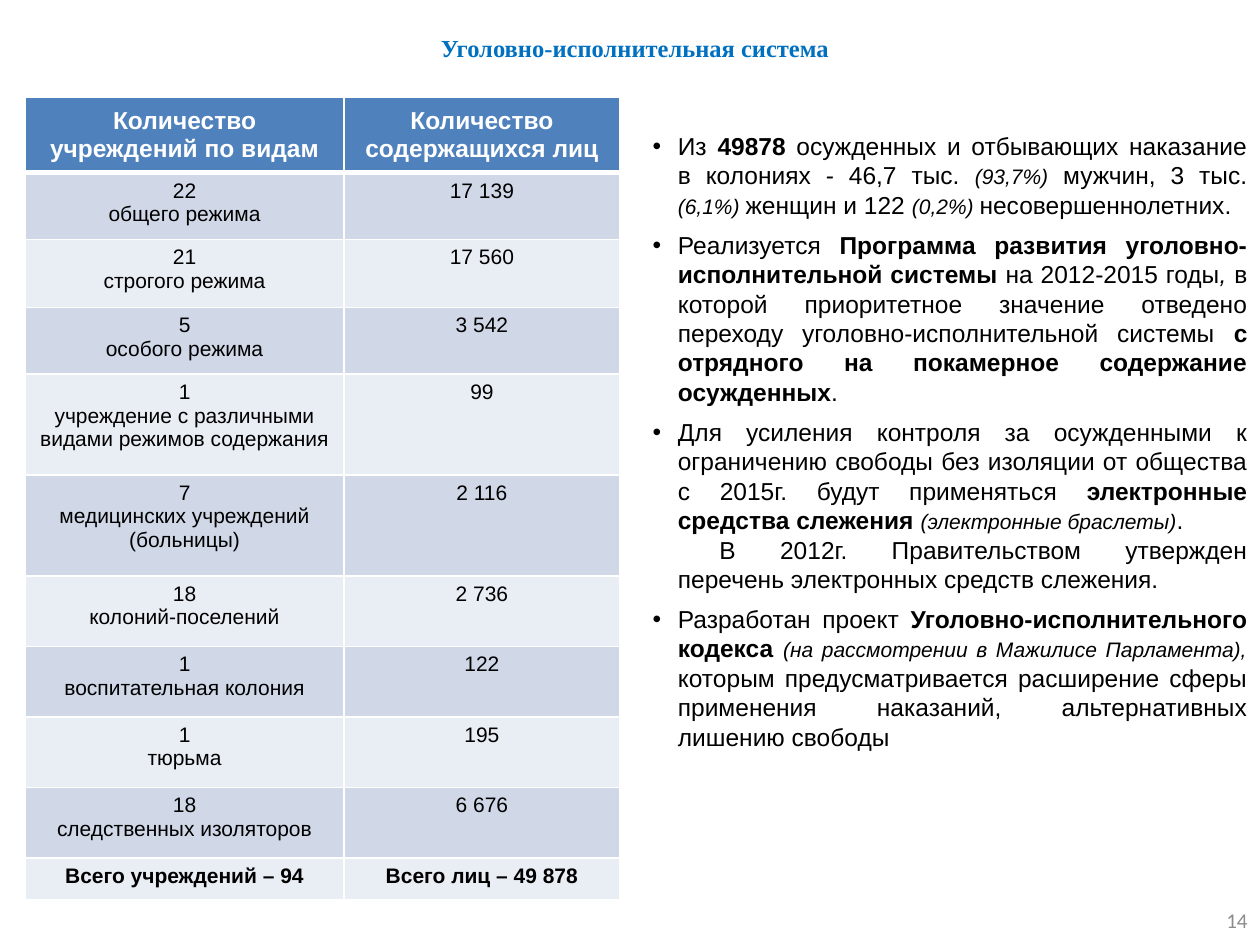
from dataclasses import dataclass
from typing import Any

from lxml import etree
from pptx import Presentation
from pptx import util as u
from pptx.dml.color import RGBColor
from pptx.enum import text as t
from pptx.oxml import ns

BLUE = RGBColor(0x4F, 0x81, 0xBD)
BAND_DARK = RGBColor(0xD0, 0xD8, 0xE8)
BAND_LIGHT = RGBColor(0xE9, 0xED, 0xF4)
TITLE_BLUE = RGBColor(0x00, 0x70, 0xC0)
GRAY = RGBColor(0x8C, 0x8C, 0x8C)
WHITE = RGBColor(0xFF, 0xFF, 0xFF)
BLACK = RGBColor(0, 0, 0)

PLAIN = dict(name="Arial", size=u.Pt(14), bold=False, italic=False)
BOLD = {**PLAIN, "bold": True}
ITALIC = {**PLAIN, "italic": True}
NOTE = {**ITALIC, "size": u.Pt(12)}
CELL = {**PLAIN, "size": u.Pt(12)}
TOTAL = {**CELL, "bold": True}
TITLE = {**BOLD, "name": "Times New Roman"}
NUMBER = {**CELL, "name": "Calibri"}


@dataclass
class Row:
    height: float
    cells: tuple[str, str]


@dataclass
class Item:
    runs: list[tuple[str, dict[str, Any]]]
    bullet: bool = True
    indent: float = -0.2
    space_after: int = 6


ROWS = [
    Row(0.6, ("Количество учреждений по видам", "Количество содержащихся лиц")),
    Row(0.53, ("22\nобщего режима", "17 139")),
    Row(0.54, ("21\nстрогого режима", "17 560")),
    Row(0.53, ("5\nособого режима", "3 542")),
    Row(0.8, ("1\nучреждение с различными видами режимов содержания", "99")),
    Row(0.8, ("7\nмедицинских учреждений (больницы)", "2 116")),
    Row(0.56, ("18\nколоний-поселений", "2 736")),
    Row(0.56, ("1\nвоспитательная колония", "122")),
    Row(0.56, ("1\nтюрьма", "195")),
    Row(0.56, ("18\nследственных изоляторов", "6 676")),
    Row(0.33, ("Всего учреждений – 94", "Всего лиц – 49 878")),
]
COLUMN_WIDTHS = (2.53, 2.19)

ITEMS = [
    Item([("Из ", PLAIN), ("49878", BOLD),
          (" осужденных и отбывающих наказание в колониях - 46,7 тыс. ", PLAIN),
          ("(93,7%)", NOTE), (" мужчин, 3 тыс. ", PLAIN), ("(6,1%) ", NOTE),
          ("женщин и 122 ", PLAIN), ("(0,2%) ", NOTE),
          ("несовершеннолетних.", PLAIN)]),
    Item([("Реализуется ", PLAIN),
          ("Программа развития уголовно-исполнительной системы", BOLD),
          (" на 2012-2015 годы", PLAIN), (", ", ITALIC),
          ("в которой приоритетное значение отведено переходу "
           "уголовно-исполнительной системы ", PLAIN),
          ("с отрядного на покамерное содержание осужденных", BOLD), (".", PLAIN)]),
    Item([("Для усиления контроля за осужденными к ограничению свободы без "
           "изоляции от общества с 2015г. будут применяться ", PLAIN),
          ("электронные средства слежения ", BOLD),
          ("(электронные браслеты)", NOTE), (".", PLAIN)], space_after=0),
    Item([("В 2012г. Правительством утвержден перечень электронных средств "
           "слежения.", PLAIN)], bullet=False, indent=0.33),
    Item([("Разработан проект ", PLAIN),
          ("Уголовно-исполнительного кодекса ", BOLD),
          ("(на рассмотрении в Мажилисе Парламента),", NOTE),
          (" которым предусматривается расширение сферы применения наказаний, "
           "альтернативных лишению свободы", PLAIN)]),
]


def set_format(target: Any, values: dict[str, Any]) -> None:
    for name, value in values.items():
        setattr(target, name, value)


def place(shape: Any, left: float, top: float, width: float, height: float) -> None:
    lengths = zip(("left", "top", "width", "height"), (left, top, width, height))
    set_format(shape, {name: u.Inches(value) for name, value in lengths})


def add_run(paragraph: Any, words: str, style: dict[str, Any], color: RGBColor) -> None:
    run = paragraph.add_run()
    run.text = words
    set_format(run.font, style)
    run.font.color.rgb = color


def set_borders(cell: Any, bottom_width: float) -> None:
    properties = cell._tc.get_or_add_tcPr()
    for index, side in enumerate(("lnL", "lnR", "lnT", "lnB")):
        width = bottom_width if side == "lnB" else 1
        line = etree.Element(ns.qn(f"a:{side}"), w=str(u.Pt(width)))
        fill = etree.SubElement(line, ns.qn("a:solidFill"))
        etree.SubElement(fill, ns.qn("a:srgbClr"), val=str(WHITE))
        properties.insert(index, line)


def add_table(slide: Any) -> None:
    frame = slide.shapes.add_table(
        len(ROWS), len(COLUMN_WIDTHS), u.Inches(0.2), u.Inches(0.77),
        u.Inches(sum(COLUMN_WIDTHS)), u.Inches(sum(row.height for row in ROWS)))
    table = frame.table
    for column, width in zip(table.columns, COLUMN_WIDTHS):
        column.width = u.Inches(width)
    for index, row in enumerate(ROWS):
        table.rows[index].height = u.Inches(row.height)
        header = index == 0
        style = BOLD if header else TOTAL if row is ROWS[-1] else CELL
        band = BAND_DARK if index % 2 else BAND_LIGHT
        for cell, content in zip(table.rows[index].cells, row.cells):
            cell.fill.solid()
            cell.fill.fore_color.rgb = BLUE if header else band
            cell.vertical_anchor = t.MSO_ANCHOR.MIDDLE if header else t.MSO_ANCHOR.TOP
            set_borders(cell, 3 if header else 1)
            for number, words in enumerate(content.split("\n")):
                frame_text = cell.text_frame
                paragraph = frame_text.add_paragraph() if number else frame_text.paragraphs[0]
                paragraph.alignment = t.PP_ALIGN.CENTER
                add_run(paragraph, words, style, WHITE if header else BLACK)


def add_item(paragraph: Any, item: Item) -> None:
    set_format(paragraph, dict(alignment=t.PP_ALIGN.JUSTIFY, space_before=u.Pt(0),
                               space_after=u.Pt(item.space_after)))
    properties = paragraph._p.get_or_add_pPr()
    properties.set("marL", str(u.Inches(0.2)))
    properties.set("indent", str(u.Inches(item.indent)))
    if item.bullet:
        etree.SubElement(properties, ns.qn("a:buFont"), typeface="Arial")
        etree.SubElement(properties, ns.qn("a:buChar"), char="•")
    else:
        etree.SubElement(properties, ns.qn("a:buNone"))
    for words, style in item.runs:
        add_run(paragraph, words, style, BLACK)


def main() -> None:
    presentation = Presentation()
    presentation.slide_width, presentation.slide_height = u.Inches(10), u.Inches(7.5)
    slide = presentation.slides.add_slide(presentation.slide_layouts[1])
    top_frame = dict(vertical_anchor=t.MSO_ANCHOR.TOP, auto_size=t.MSO_AUTO_SIZE.NONE)

    # Title
    title = slide.shapes.title
    place(title, 2.48, 0.21, 5.12, 0.24)
    set_format(title.text_frame, {**top_frame, "word_wrap": False})
    heading = title.text_frame.paragraphs[0]
    heading.alignment = t.PP_ALIGN.CENTER
    add_run(heading, "Уголовно-исполнительная система", TITLE, TITLE_BLUE)

    # Institutions and inmates
    add_table(slide)

    # Bulleted list
    body = slide.placeholders[1]
    place(body, 5.08, 0.99, 4.92, 5.07)
    set_format(body.text_frame, {**top_frame, "word_wrap": True})
    for index, item in enumerate(ITEMS):
        frame = body.text_frame
        add_item(frame.add_paragraph() if index else frame.paragraphs[0], item)

    # Page number
    page = slide.shapes.add_textbox(*map(u.Inches, (7.75, 7.1, 2.25, 0.4)))
    set_format(page.text_frame, dict(word_wrap=True, vertical_anchor=t.MSO_ANCHOR.MIDDLE))
    paragraph = page.text_frame.paragraphs[0]
    paragraph.alignment = t.PP_ALIGN.RIGHT
    add_run(paragraph, "14", NUMBER, GRAY)

    presentation.save("out.pptx")


if __name__ == "__main__":
    main()
